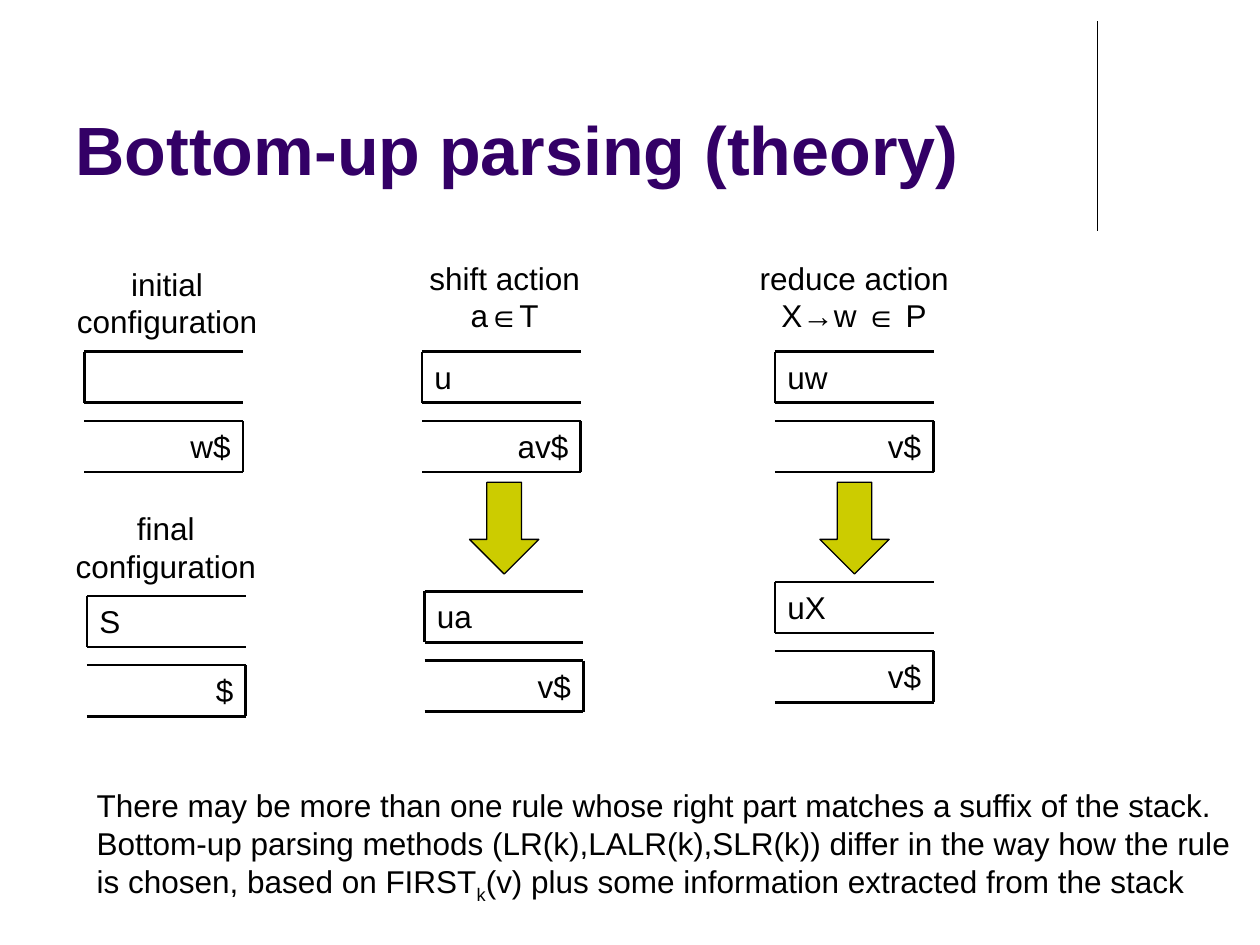
from dataclasses import dataclass
from typing import Any

from lxml import etree
from pptx import Presentation
from pptx.dml.color import RGBColor
from pptx.enum import shapes, text
from pptx.oxml.ns import qn
from pptx.util import Pt

LEFT, MID, RIGHT = text.PP_ALIGN.LEFT, text.PP_ALIGN.CENTER, text.PP_ALIGN.RIGHT


@dataclass(frozen=True)
class Theme:
    """Colours, type sizes and line widths."""
    font: str = "Arial"
    ink: RGBColor = RGBColor(0, 0, 0)
    head: RGBColor = RGBColor(0x33, 0x00, 0x66)
    arrow: RGBColor = RGBColor(0xCC, 0xCC, 0x00)
    big: float = 39
    body: float = 18
    thin: float = 0.75
    thick: float = 1.5


@dataclass(frozen=True)
class Box:
    """A place in points."""
    x: float
    y: float
    w: float
    h: float


@dataclass(frozen=True)
class State:
    """A parser state: stack above, input below."""
    x: float
    y: float
    stack: str
    rest: str


@dataclass(frozen=True)
class Label:
    """A caption with its place."""
    box: Box
    words: str


THEME = Theme()
WIDE, HIGH, STEP = 90.7, 29.2, 39.6
TITLE = Box(36, 9.4, 594, 102.2)
NOTE = Box(48.2, 445.7, 668.9, 72.7)
STATES = [
    State(48.2, 200.9, "", "w$"),
    State(49.7, 340.5, "S", "$"),
    State(241.2, 200.9, "u", "av$"),
    State(242.6, 337.9, "ua", "v$"),
    State(442.8, 200.9, "uw", "v$"),
    State(442.8, 332.5, "uX", "v$"),
]
LABELS = [
    Label(Box(36, 147.6, 118.8, 51), "initial\vconfiguration"),
    Label(Box(35.3, 287.3, 118.8, 51), "final\vconfiguration"),
    Label(Box(237.6, 144.2, 101.5, 51), "shift action\va∈T"),
    Label(Box(426.2, 144.2, 123.8, 51), "reduce action\vX→w ∈ P"),
]
ARROWS = [Box(x, 275.6, 39.6, 52.4) for x in (268.3, 468.5)]
NOTES = [
    "There may be more than one rule whose right part matches a suffix of the stack.\v"
    "Bottom-up parsing methods (LR(k),LALR(k),SLR(k)) differ in the way how the rule",
    "is chosen, based on FIRST",
]


def style(item: Any, values: dict[str, Any]) -> None:
    """Set each named attribute on an item."""
    for key, val in values.items():
        setattr(item, key, val)


def ink(font: Any, size: float, color: RGBColor, bold: bool = False) -> None:
    """Format a font from the theme."""
    style(font, {"name": THEME.font, "size": Pt(size), "bold": bold})
    font.color.rgb = color


def spot(box: Box) -> tuple[Pt, Pt, Pt, Pt]:
    """Turn a box into lengths."""
    return Pt(box.x), Pt(box.y), Pt(box.w), Pt(box.h)


def line(pool: Any, x: float, y: float, w: float, h: float, width: float) -> None:
    """Draw a straight line from a point by an offset."""
    rule = pool.add_connector(
        shapes.MSO_CONNECTOR.STRAIGHT, Pt(x), Pt(y), Pt(x + w), Pt(y + h))
    rule.line.width = Pt(width)
    rule.line.color.rgb = THEME.ink
    etree.SubElement(rule._element.spPr, qn("a:effectLst"))


def write(pool: Any, box: Box, lines: list[str], align: Any, wrap: bool) -> Any:
    """Add a text box and return its last paragraph."""
    frame = pool.add_textbox(*spot(box)).text_frame
    style(frame, {"word_wrap": wrap, "auto_size": text.MSO_AUTO_SIZE.SHAPE_TO_FIT_TEXT})
    for i, words in enumerate(lines):
        para = frame.add_paragraph() if i else frame.paragraphs[0]
        style(para, {"text": words, "alignment": align})
        for run in para.runs:
            ink(run.font, THEME.body, THEME.ink)
    return para


def draw(pool: Any, state: State) -> None:
    """Draw an open stack above an open input tape."""
    group = pool.add_group_shape().shapes
    rows = [(state.y, state.x, state.stack, LEFT),
            (state.y + STEP, state.x + WIDE, state.rest, RIGHT)]
    for top, side, words, align in rows:
        for y in (top, top + HIGH):
            line(group, state.x, y, WIDE, 0, THEME.thick)
        line(group, side, top, 0, HIGH, THEME.thick)
        if words:
            write(group, Box(state.x, top, WIDE, HIGH), [words], align, True)


def point(pool: Any, box: Box) -> None:
    """Draw a down arrow."""
    arrow = pool.add_shape(shapes.MSO_SHAPE.DOWN_ARROW, *spot(box))
    arrow.shadow.inherit = False
    arrow.fill.solid()
    arrow.fill.fore_color.rgb = THEME.arrow
    arrow.line.color.rgb = THEME.ink
    arrow.line.width = Pt(THEME.thin)


def main() -> None:
    """Build the slide."""
    deck = Presentation()
    style(deck, {"slide_width": Pt(720), "slide_height": Pt(540)})
    slide = deck.slides.add_slide(deck.slide_layouts[5])
    pool = slide.shapes

    title = pool.title
    style(title, dict(zip(("left", "top", "width", "height"), spot(TITLE))))
    title.text = "Bottom-up parsing (theory)"
    style(title.text_frame, {"vertical_anchor": text.MSO_ANCHOR.BOTTOM,
                             "auto_size": text.MSO_AUTO_SIZE.NONE})
    para = title.text_frame.paragraphs[0]
    para.alignment = LEFT
    ink(para.runs[0].font, THEME.big, THEME.head, True)

    line(pool, 627.1, 12.2, 0, 119.6, THEME.thin)
    for state in STATES:
        draw(pool, state)
    for label in LABELS:
        write(pool, label.box, [label.words], MID, False)
    for box in ARROWS:
        point(pool, box)

    last = write(pool, NOTE, NOTES, LEFT, False)
    for words, base in (("k", "-25000"),
                        ("(v) plus some information extracted from the stack", "0")):
        run = last.add_run()
        run.text = words
        ink(run.font, THEME.body, THEME.ink)
        run._r.get_or_add_rPr().set("baseline", base)
    deck.save("out.pptx")


if __name__ == "__main__":
    main()
